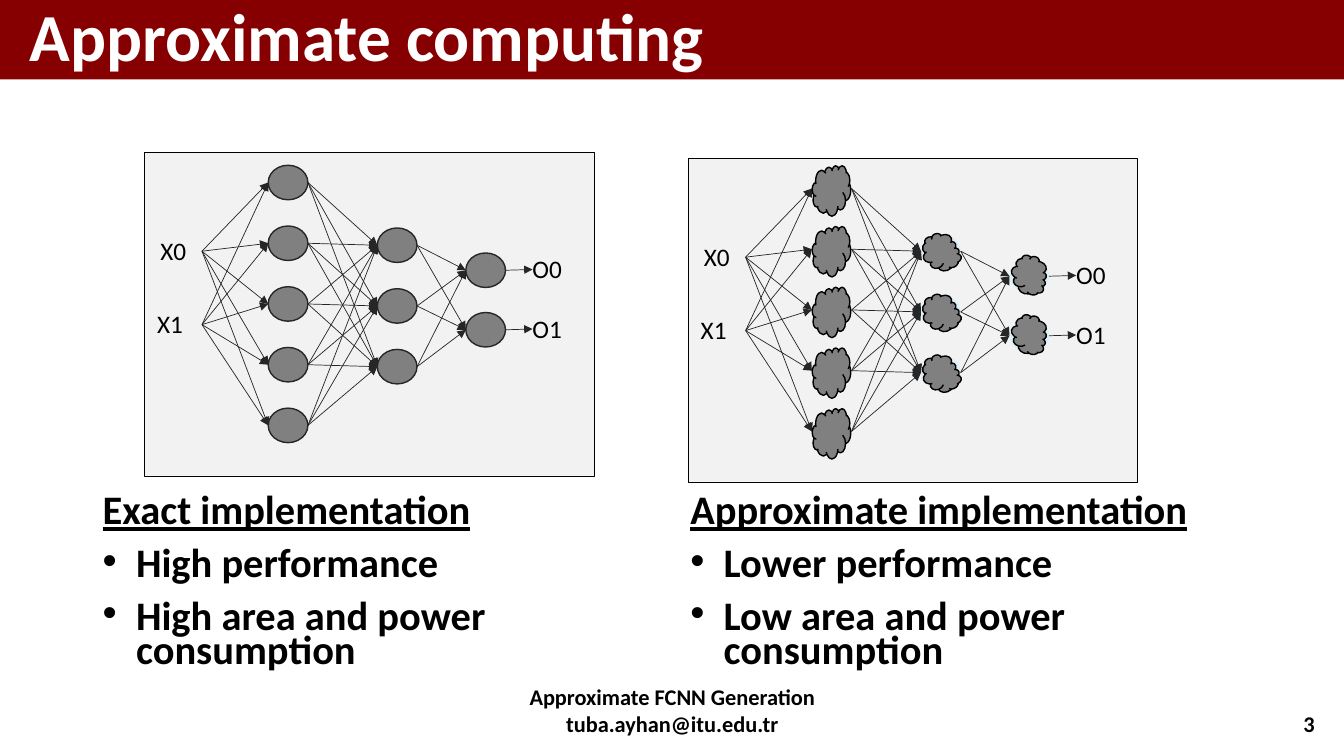
from itertools import product

from lxml import etree
from pptx import Presentation
from pptx.dml.color import RGBColor
from pptx.enum.shapes import MSO_CONNECTOR, MSO_SHAPE
from pptx.enum.text import MSO_ANCHOR, PP_ALIGN
from pptx.oxml.ns import qn
from pptx.util import Cm, Pt

RECTANGLE, OVAL, CLOUD = MSO_SHAPE.RECTANGLE, MSO_SHAPE.OVAL, MSO_SHAPE.CLOUD
STRAIGHT = MSO_CONNECTOR.STRAIGHT
TOP, MIDDLE, BOTTOM = MSO_ANCHOR.TOP, MSO_ANCHOR.MIDDLE, MSO_ANCHOR.BOTTOM
LEFT, CENTER, RIGHT = PP_ALIGN.LEFT, PP_ALIGN.CENTER, PP_ALIGN.RIGHT

FONT = "Calibri"
MAROON, WHITE, BLACK = "870001", "FFFFFF", "000000"
PANEL_GRAY, NODE_GRAY, DARK_GRAY, PALE_BLUE = "F2F2F2", "808080", "262626", "DBEFF9"

NODE_WIDTH, NODE_HEIGHT = 1.0, 0.87
LABEL_HEIGHT = 1.02
# Each layer: left edge, first centre, spacing, node count
LAYERS = [(3.12, 0.76, 1.53, 5), (5.87, 2.34, 1.53, 3), (8.1, 2.97, 1.5, 2)]
CLOUD_STYLES = [(1.27, 0.06, 0), (0.91, 0.03, 70.6), (0.91, -0.03, 106.3)]
INPUT_X, INPUT_Y, INPUT_STEP = 1.45, 2.49, 1.85
OUTPUT_X = 9.78


def color(value):
    return RGBColor.from_string(value)


def add_box(shapes, kind, left, top, width, height, fill, line=None, line_width=1):
    shape = shapes.add_shape(kind, Cm(left), Cm(top), Cm(width), Cm(height))
    shape.shadow.inherit = False
    shape.fill.solid()
    shape.fill.fore_color.rgb = color(fill)
    if line:
        shape.line.color.rgb = color(line)
        shape.line.width = Pt(line_width)
    else:
        shape.line.fill.background()
    return shape


def add_text(shapes, box, lines, size, bold=True, text_color=BLACK,
             align=LEFT, anchor=TOP, side_inset=0.25):
    left, top, width, height = box
    shape = shapes.add_textbox(Cm(left), Cm(top), Cm(width), Cm(height))
    frame = shape.text_frame
    frame.word_wrap = True
    frame.vertical_anchor = anchor
    frame.margin_left = frame.margin_right = Cm(side_inset)
    frame.text = "\n".join(lines)
    for paragraph in frame.paragraphs:
        paragraph.alignment = align
        font = paragraph.runs[0].font
        font.name, font.size, font.bold = FONT, Pt(size), bold
        font.color.rgb = color(text_color)
    return frame


def add_arrow(shapes, start, end):
    connector = shapes.add_connector(STRAIGHT, *(Cm(value) for value in start + end))
    connector.line.color.rgb = color(DARK_GRAY)
    connector.line.width = Pt(0.5)
    line = connector.line._get_or_add_ln()
    etree.SubElement(line, qn("a:tailEnd"), type="triangle")
    etree.SubElement(connector._element.spPr, qn("a:effectLst"))


def add_title_band(slide, left, top, width, height):
    add_box(slide.shapes, RECTANGLE, left, top, width, height, MAROON)
    frame = add_text(slide.shapes, (left + 0.5, top, width - 1, height),
                     ["Approximate computing"], 48, text_color=WHITE, anchor=MIDDLE)
    frame.paragraphs[0].line_spacing = 0.9


def add_footer(slide, left, top, width, height):
    add_text(slide.shapes, (left, top, 11.43, height),
             ["Approximate FCNN Generation tuba.ayhan@itu.edu.tr"],
             16, align=CENTER, anchor=BOTTOM)
    add_text(slide.shapes, (left + width - 8.7, top, 8.7, height),
             ["3"], 16, align=RIGHT, anchor=BOTTOM)


def add_summary(slide, left, top, width, height, heading, points):
    frame = add_text(slide.shapes, (left, top, width, height), [heading] + points, 28.9)
    for paragraph in frame.paragraphs:
        paragraph.line_spacing = 0.7
        paragraph.space_before = Pt(13.3)
    frame.paragraphs[0].runs[0].font.underline = True
    for paragraph in frame.paragraphs[1:]:
        properties = paragraph._p.get_or_add_pPr()
        properties.set("marL", str(Cm(0.84)))
        properties.set("indent", str(Cm(-0.84)))
        etree.SubElement(properties, qn("a:buFont"), typeface="Arial")
        etree.SubElement(properties, qn("a:buChar"), char="•")


def add_network(slide, left, top, width, height, approximate):
    shapes = slide.shapes.add_group_shape().shapes
    add_box(shapes, RECTANGLE, left, top, width, height, PANEL_GRAY, BLACK, 0.25)
    layers = [[(left + x, top + y + step * index) for index in range(count)]
              for x, y, step, count in LAYERS]
    inputs = [(left + INPUT_X, top + INPUT_Y + INPUT_STEP * index) for index in range(2)]
    outputs = [(left + OUTPUT_X, y - 0.02) for x, y in layers[-1]]

    fill, line = (PALE_BLUE, None) if approximate else (NODE_GRAY, DARK_GRAY)
    for x, y in sum(layers, []):
        add_box(shapes, OVAL, x, y - NODE_HEIGHT / 2, NODE_WIDTH, NODE_HEIGHT, fill, line)

    label_lefts = [left + 0.4, left + 0.32, left + OUTPUT_X, left + OUTPUT_X]
    for text, x, (_, y) in zip(["X0", "X1", "O0", "O1"], label_lefts, inputs + outputs):
        add_text(shapes, (x, y - 0.53, 1.14, LABEL_HEIGHT), [text], 18,
                 bold=False, side_inset=0)

    exits = [[(x + NODE_WIDTH, y) for x, y in layer] for layer in layers]
    for sources, targets in zip([inputs] + exits[:2], layers):
        for start, end in product(sources, targets):
            add_arrow(shapes, start, end)
    for start, end in zip(exits[-1], outputs):
        add_arrow(shapes, start, end)

    if approximate:
        for layer, (cloud_height, shift, rotation) in zip(layers, CLOUD_STYLES):
            for x, y in layer:
                cloud = add_box(shapes, CLOUD, x + 0.01, y + shift - cloud_height / 2,
                                0.97, cloud_height, NODE_GRAY, BLACK)
                cloud.rotation = rotation


def main():
    presentation = Presentation()
    presentation.slide_width, presentation.slide_height = Cm(33.87), Cm(19.05)
    slide = presentation.slides.add_slide(presentation.slide_layouts[6])
    add_title_band(slide, 0, 0, 33.87, 2)
    add_footer(slide, 11.23, 17.68, 22.15, 1.02)
    add_summary(slide, 2.34, 12.42, 14.4, 4.75, "Exact implementation",
                ["High performance", "High area and power consumption"])
    add_summary(slide, 17.15, 12.42, 14.4, 4.75, "Approximate implementation",
                ["Lower performance", "Low area and power consumption"])
    add_network(slide, 3.64, 3.84, 11.33, 8.15, approximate=False)
    add_network(slide, 17.34, 3.99, 11.33, 8.15, approximate=True)
    presentation.save("out.pptx")


if __name__ == "__main__":
    main()
